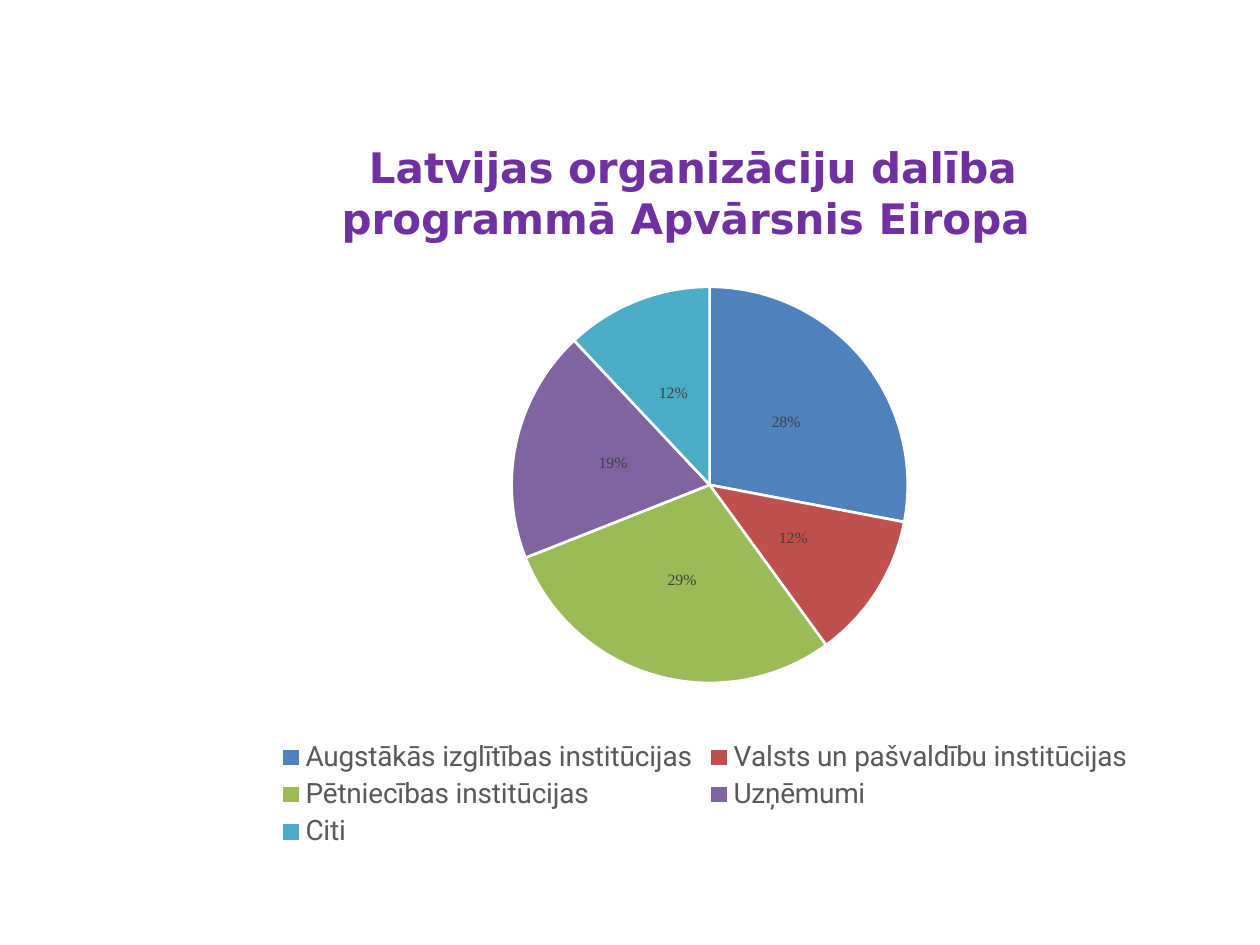
from lxml import etree
from pptx import Presentation
from pptx import util as u
from pptx.chart.data import CategoryChartData
from pptx.dml.color import RGBColor
from pptx.enum import chart as ch, text
from pptx.oxml.ns import qn

HEAD = "Latvijas organizāciju dalība programmā Apvārsnis Eiropa "
SHARES = [
    ("Augstākās izglītības institūcijas", 28, "4F81BD"),
    ("Valsts un pašvaldību institūcijas", 12, "C0504D"),
    ("Pētniecības institūcijas", 29, "9BBB59"),
    ("Uzņēmumi", 19, "8064A2"),
    ("Citi", 12, "4BACC6"),
]
THEME = {
    "head": {"name": "DejaVu Sans", "size": 24, "bold": True, "color": "7030A0"},
    "chart": {"name": "Times New Roman", "size": 10, "color": "000000"},
    "label": {"name": "Times New Roman", "size": 9, "color": "404040"},
    "legend": {"name": "Roboto", "size": 16, "color": "595959"},
    "edge": "FFFFFF",
}
HEAD_BOX = (129.6, 69.1, 532.8, 81.4)
PIE_BOX = (126.7, 142.6, 552.2, 344.9)
PLOT = {"x": 0.3, "y": 0.06, "w": 0.41, "h": 0.66}


def style(font, key):
    for name, val in THEME[key].items():
        if name == "color":
            font.color.rgb = RGBColor.from_string(val)
        else:
            setattr(font, name, u.Pt(val) if name == "size" else val)


def place_plot(chart):
    area = chart._chartSpace.chart.plotArea
    for old in area.findall(qn("c:layout")):
        area.remove(old)
    layout = etree.Element(qn("c:layout"))
    manual = etree.SubElement(layout, qn("c:manualLayout"))
    rules = {"layoutTarget": "inner", "xMode": "edge", "yMode": "edge", **PLOT}
    for tag, val in rules.items():
        etree.SubElement(manual, qn("c:" + tag)).set("val", str(val))
    area.insert(0, layout)


def add_head(slide):
    head = slide.shapes.title
    for side, val in zip(("left", "top", "width", "height"), HEAD_BOX):
        setattr(head, side, u.Pt(val))
    frame = head.text_frame
    frame.text = HEAD
    frame.word_wrap = True
    frame.auto_size = text.MSO_AUTO_SIZE.NONE
    frame.vertical_anchor = text.MSO_ANCHOR.MIDDLE
    line = frame.paragraphs[0]
    line.alignment = text.PP_ALIGN.CENTER
    style(line.runs[0].font, "head")


def add_pie(slide):
    data = CategoryChartData()
    data.categories = [name for name, _, _ in SHARES]
    data.add_series("Series 1", [val for _, val, _ in SHARES])
    box = [u.Pt(val) for val in PIE_BOX]
    chart = slide.shapes.add_chart(ch.XL_CHART_TYPE.PIE, *box, data).chart
    style(chart.font, "chart")
    chart.has_title = False
    chart.has_legend = True
    chart.legend.position = ch.XL_LEGEND_POSITION.BOTTOM
    chart.legend.include_in_layout = False
    style(chart.legend.font, "legend")
    plot = chart.plots[0]
    plot.vary_by_categories = True
    plot.has_data_labels = True
    labels = plot.data_labels
    form = {
        "show_percentage": True,
        "show_value": False,
        "number_format": "0%",
        "number_format_is_linked": False,
        "position": ch.XL_LABEL_POSITION.CENTER,
    }
    for name, val in form.items():
        setattr(labels, name, val)
    style(labels.font, "label")
    for idx, (_, _, color) in enumerate(SHARES):
        slice_form = plot.series[0].points[idx].format
        slice_form.fill.solid()
        slice_form.fill.fore_color.rgb = RGBColor.from_string(color)
        slice_form.line.color.rgb = RGBColor.from_string(THEME["edge"])
        slice_form.line.width = u.Pt(1.5)
    place_plot(chart)


def main():
    deck = Presentation()
    deck.slide_width, deck.slide_height = u.Pt(720), u.Pt(540)
    slide = deck.slides.add_slide(deck.slide_layouts[5])
    add_head(slide)
    add_pie(slide)
    deck.save("out.pptx")


if __name__ == "__main__":
    main()
